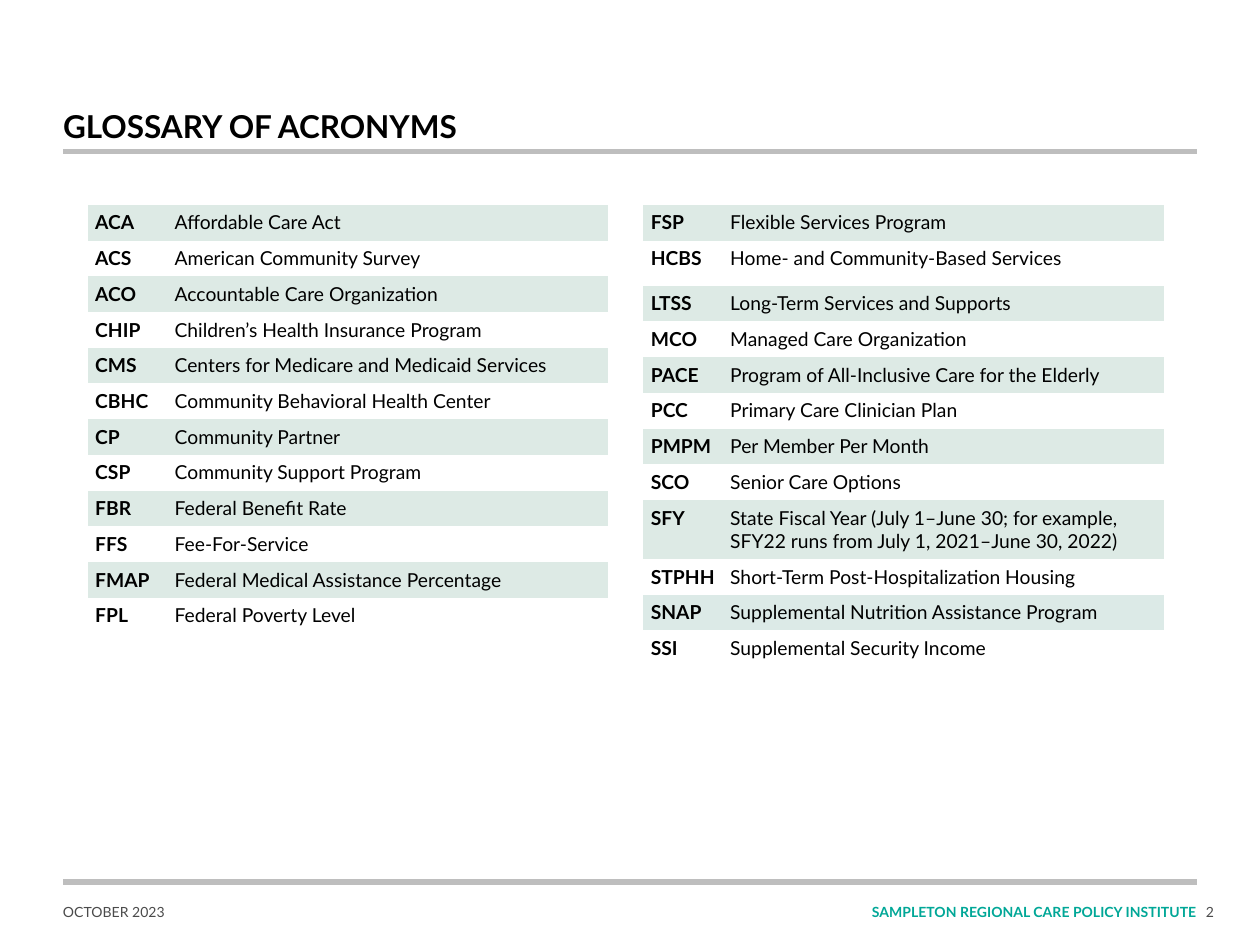
from dataclasses import dataclass

from lxml.etree import SubElement
from pptx import Presentation
from pptx.dml.color import RGBColor
from pptx.enum.shapes import MSO_CONNECTOR
from pptx.enum.text import MSO_ANCHOR, MSO_AUTO_SIZE, PP_ALIGN
from pptx.oxml.ns import qn
from pptx.util import Cm, Pt

FONT = "Lato"
COLORS = {
    "rule": "BEBEBE",
    "black": "000000",
    "gray": "4B4B4B",
    "teal": "00A797",
    "band": "DDEAE5",
    "cool_band": "DCEAE7",
    "white": "FFFFFF",
}
NO_STYLE = "{2D5ABB26-0587-4C30-8999-92F81FD0307C}"
LEFT, RIGHT = 1.27, 24.13
TABLE_TOP = 4.13
COLUMN_WIDTHS = (1.6, 8.89)
ROW_HEIGHT = 0.72


@dataclass
class Term:
    acronym: str
    meaning: str
    height: float = ROW_HEIGHT
    band: str = "band"


@dataclass
class Label:
    text: str
    left: float
    width: float
    color: str = "gray"
    bold: bool = False
    align: PP_ALIGN = PP_ALIGN.LEFT


# Glossary content
LEFT_TERMS = [
    Term("ACA", "Affordable Care Act"),
    Term("ACS", "American Community Survey"),
    Term("ACO", "Accountable Care Organization"),
    Term("CHIP", "Children’s Health Insurance Program"),
    Term("CMS", "Centers for Medicare and Medicaid Services"),
    Term("CBHC", "Community Behavioral Health Center"),
    Term("CP", "Community Partner"),
    Term("CSP", "Community Support Program"),
    Term("FBR", "Federal Benefit Rate"),
    Term("FFS", "Fee-For-Service"),
    Term("FMAP", "Federal Medical Assistance Percentage"),
    Term("FPL", "Federal Poverty Level"),
]
RIGHT_TERMS = [
    Term("FSP", "Flexible Services Program"),
    Term("HCBS", "Home- and Community-Based Services", height=0.91),
    Term("LTSS", "Long-Term Services and Supports"),
    Term("MCO", "Managed Care Organization"),
    Term("PACE", "Program of All-Inclusive Care for the Elderly"),
    Term("PCC", "Primary Care Clinician Plan"),
    Term("PMPM", "Per Member Per Month"),
    Term("SCO", "Senior Care Options"),
    Term("SFY", "State Fiscal Year (July 1–June 30; for example, "
         "SFY22 runs from July 1, 2021–June 30, 2022)", height=1.19),
    Term("STPHH", "Short-Term Post-Hospitalization Housing"),
    Term("SNAP", "Supplemental Nutrition Assistance Program", band="cool_band"),
    Term("SSI", "Supplemental Security Income"),
    Term("", "", height=0.64, band="white"),
]
FOOTER = [
    Label("OCTOBER 2023", LEFT, 4.22),
    Label("SAMPLETON REGIONAL CARE POLICY INSTITUTE", 13.18, 10.95,
          "teal", True, PP_ALIGN.RIGHT),
    Label("2", 24.31, 1.09),
]


def rgb(name: str) -> RGBColor:
    return RGBColor.from_string(COLORS[name])


def set_all(target, values: dict) -> None:
    for name, value in values.items():
        setattr(target, name, value)


def set_font(font, size: float, color: str, bold: bool) -> None:
    set_all(font, {"name": FONT, "size": Pt(size), "bold": bold})
    font.color.rgb = rgb(color)


def margins(horizontal: float, vertical: float) -> dict:
    return {
        "margin_left": Cm(horizontal), "margin_right": Cm(horizontal),
        "margin_top": Cm(vertical), "margin_bottom": Cm(vertical),
    }


def add_rule(slide, top: float) -> None:
    rule = slide.shapes.add_connector(
        MSO_CONNECTOR.STRAIGHT, Cm(LEFT), Cm(top), Cm(RIGHT), Cm(top))
    rule.line.color.rgb = rgb("rule")
    rule.line.width = Pt(3)
    SubElement(rule._element.spPr, qn("a:effectLst"))


def add_label(slide, label: Label) -> None:
    box = slide.shapes.add_textbox(
        Cm(label.left), Cm(18.21), Cm(label.width), Cm(0.81))
    set_all(box.text_frame, {"word_wrap": True, **margins(0, 0)})
    paragraph = box.text_frame.paragraphs[0]
    set_all(paragraph, {"text": label.text, "alignment": label.align})
    set_font(paragraph.runs[0].font, 8, label.color, label.bold)


def format_title(title, text: str) -> None:
    set_all(title, {"left": Cm(LEFT), "top": Cm(0.76),
                    "width": Cm(RIGHT - LEFT), "height": Cm(2.29)})
    frame = title.text_frame
    set_all(frame, {"text": text, "word_wrap": True,
                    "auto_size": MSO_AUTO_SIZE.NONE,
                    "vertical_anchor": MSO_ANCHOR.BOTTOM, **margins(0, 0.13)})
    paragraph = frame.paragraphs[0]
    paragraph.alignment = PP_ALIGN.LEFT
    set_font(paragraph.runs[0].font, 18, "black", True)


def add_glossary(slide, left: float, terms: list[Term]) -> None:
    frame = slide.shapes.add_table(
        len(terms), len(COLUMN_WIDTHS), Cm(left), Cm(TABLE_TOP),
        Cm(sum(COLUMN_WIDTHS)), Cm(sum(term.height for term in terms)))
    table = frame.table
    set_all(table, {"first_row": False, "horz_banding": False})
    table._tbl.tblPr.find(qn("a:tableStyleId")).text = NO_STYLE
    for column, width in zip(table.columns, COLUMN_WIDTHS):
        column.width = Cm(width)
    for index, (row, term) in enumerate(zip(table.rows, terms)):
        row.height = Cm(term.height)
        fill = "white" if index % 2 else term.band
        for cell, text, bold in zip(
                row.cells, (term.acronym, term.meaning), (True, False)):
            set_all(cell, margins(0.15, 0.12))
            cell.fill.solid()
            cell.fill.fore_color.rgb = rgb(fill)
            paragraph = cell.text_frame.paragraphs[0]
            if text:
                run = paragraph.add_run()
                run.text = text
                set_font(run.font, 11, "black", bold)
            else:
                SubElement(paragraph._p, qn("a:endParaRPr"), sz="900")


def main() -> None:
    presentation = Presentation()
    set_all(presentation, {"slide_width": Cm(25.4), "slide_height": Cm(19.05)})
    slide = presentation.slides.add_slide(presentation.slide_layouts[5])

    # Title and rules
    format_title(slide.shapes.title, "GLOSSARY OF ACRONYMS")
    for top in (17.78, 3.05):
        add_rule(slide, top)

    # Two glossary columns
    add_glossary(slide, 12.97, RIGHT_TERMS)
    add_glossary(slide, 1.77, LEFT_TERMS)

    # Footer
    for label in FOOTER:
        add_label(slide, label)

    presentation.save("out.pptx")


if __name__ == "__main__":
    main()
